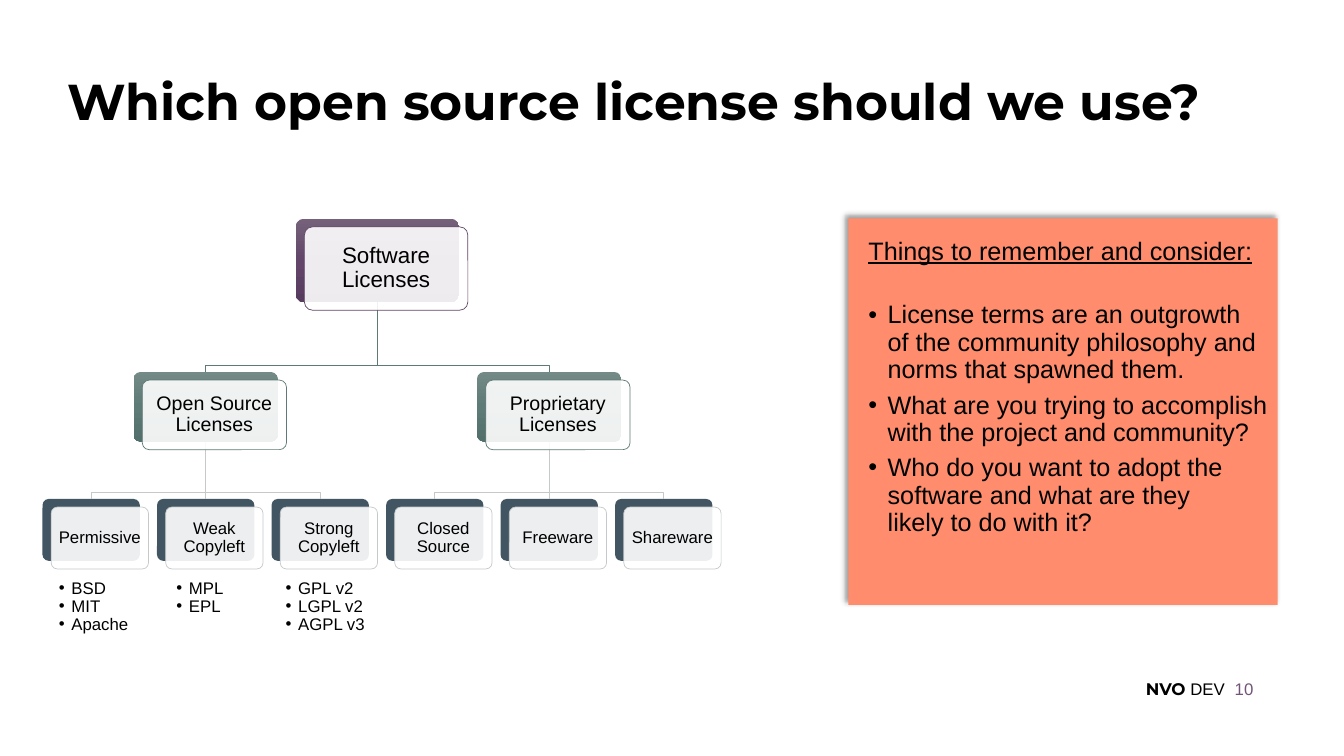
from copy import deepcopy

from pptx import Presentation
from pptx import util as u
from pptx.dml.color import RGBColor
from pptx.enum import shapes, text
from pptx.oxml import parse_xml
from pptx.oxml.ns import nsdecls, qn

Pt = u.Pt
BLACK = "000000"
LEAF_LEFT, LEAF_PITCH = 30.4, 81.8
PLATE_SHIFT_X, PLATE_SHIFT_Y = 6.2, 5.8
BAR_GAP = 5

# top, width, height, text size, card colours, plate line, branch line
ROOT = (156.2, 116.8, 59.6, 16, ("75627A", "624569", "583C5E"), "614767", None)
BRANCH = (265.7, 103, 49.7, 14, ("738A86", "5E7B77", "526F6B"), "5F7A76", "5F7A76")
LEAF = (356.4, 69.5, 44.2, 12, ("425563",), "C6C9CA", "C6C9CA")

TREE = {
    "Open Source Licenses": ["Permissive", "Weak Copyleft", "Strong Copyleft"],
    "Proprietary Licenses": ["Closed Source", "Freeware", "Shareware"],
}
EXAMPLES = [
    (42, ["BSD", "MIT", "Apache"]),
    (126, ["MPL", "EPL"]),
    (204, ["GPL v2", "LGPL v2", "AGPL v3"]),
]
REMINDERS = [
    "License terms are an outgrowth\nof the community philosophy and\nnorms that spawned them.",
    "What are you trying to accomplish\nwith the project and community?",
    "Who do you want to adopt the\nsoftware and what are they\nlikely to do with it?",
]


def rgb(value):
    return RGBColor.from_string(value)


def format_run(run, size, colour=BLACK, font="Arial", bold=False):
    run.font.size, run.font.name, run.font.bold = Pt(size), font, bold
    run.font.color.rgb = rgb(colour)


def format_frame(frame, insets, anchor=text.MSO_ANCHOR.TOP):
    """Insets are left, top, right, bottom in points."""
    frame.word_wrap = True
    frame.vertical_anchor = anchor
    (frame.margin_left, frame.margin_top,
     frame.margin_right, frame.margin_bottom) = map(Pt, insets)


def format_paragraph(paragraph, size, **style):
    paragraph.line_spacing = 0.9
    for run in paragraph.runs:
        format_run(run, size, **style)


def add_bullet(paragraph, indent):
    properties = paragraph._p.get_or_add_pPr()
    properties.set("marL", str(Pt(indent)))
    properties.set("indent", str(-Pt(indent)))
    properties.append(parse_xml(f'<a:buFont {nsdecls("a")} typeface="Arial"/>'))
    properties.append(parse_xml(f'<a:buChar {nsdecls("a")} char="•"/>'))


def add_text(slide, left, top, width, height, insets=(0, 0, 0, 0),
             anchor=text.MSO_ANCHOR.MIDDLE):
    box = slide.shapes.add_textbox(Pt(left), Pt(top), Pt(width), Pt(height))
    format_frame(box.text_frame, insets, anchor)
    return box.text_frame


def add_rounded(slide, left, top, width, height):
    shape = slide.shapes.add_shape(shapes.MSO_SHAPE.ROUNDED_RECTANGLE,
                                   Pt(left), Pt(top), Pt(width), Pt(height))
    shape.adjustments[0] = 0.1
    shape.shadow.inherit = False
    return shape


def add_card(slide, center, level):
    """Draw the coloured card behind a node."""
    top, width, height, _, colours, _, _ = level
    card = add_rounded(slide, center - width / 2, top, width, height)
    card.line.fill.background()
    if len(colours) == 1:
        card.fill.solid()
        card.fill.fore_color.rgb = rgb(colours[0])
        return card
    card.fill.gradient()
    card.fill.gradient_angle = 270
    stop_list = card._element.spPr.find(qn("a:gradFill")).find(qn("a:gsLst"))
    stop_list.insert(1, deepcopy(stop_list[0]))
    for stop, position, colour in zip(card.fill.gradient_stops, (0, 0.5, 1), colours):
        stop.position = position
        stop.color.rgb = rgb(colour)
    return card


def add_plate(slide, center, level, label):
    """Draw the pale, see-through plate that carries a node's label."""
    top, width, height, size, _, line, _ = level
    plate = add_rounded(slide, center - width / 2 + PLATE_SHIFT_X,
                        top + PLATE_SHIFT_Y, width, height)
    plate.fill.solid()
    plate.fill.fore_color.rgb = rgb("FFFFFF")
    colour = plate._element.spPr.find(qn("a:solidFill"))[0]
    colour.append(parse_xml(f'<a:alpha {nsdecls("a")} val="90000"/>'))
    plate.line.color.rgb = rgb(line)
    plate.line.width = Pt(0.5)
    format_frame(plate.text_frame, (3, 3, 3, 3), text.MSO_ANCHOR.MIDDLE)
    plate.text_frame.text = label
    paragraph = plate.text_frame.paragraphs[0]
    paragraph.alignment = text.PP_ALIGN.CENTER
    format_paragraph(paragraph, size)


def add_branch_line(slide, parent, child, colour):
    start_x, start_y = parent.left + parent.width // 2, parent.top + parent.height
    end_x, end_y = child.left + child.width // 2, child.top
    if abs(start_x - end_x) < Pt(1):
        line = slide.shapes.add_connector(shapes.MSO_CONNECTOR.STRAIGHT,
                                          start_x, start_y, end_x, end_y)
        line.begin_connect(parent, 2)
        line.end_connect(child, 0)
    else:
        bar_y = end_y - Pt(BAR_GAP)
        builder = slide.shapes.build_freeform(start_x, start_y)
        builder.add_line_segments([(start_x, bar_y), (end_x, bar_y), (end_x, end_y)],
                                  close=False)
        line = builder.convert_to_shape()
        line.fill.background()
    line.line.color.rgb = rgb(colour)
    line.line.width = Pt(0.5)
    if line._element.spPr.find(qn("a:effectLst")) is None:
        line._element.spPr.append(parse_xml(f'<a:effectLst {nsdecls("a")}/>'))


def add_license_tree(slide):
    leaf_center = LEAF_LEFT + LEAF[1] / 2
    nodes, links, branch_centers = [], [], []
    for branch, leaves in TREE.items():
        centers = []
        for leaf in leaves:
            centers.append(leaf_center)
            nodes.append((leaf, leaf_center, LEAF))
            links.append((branch, leaf, LEAF))
            leaf_center += LEAF_PITCH
        branch_centers.append(sum(centers) / len(centers))
        nodes.append((branch, branch_centers[-1], BRANCH))
        links.append(("Software Licenses", branch, BRANCH))
    root_center = sum(branch_centers) / len(branch_centers)
    nodes.append(("Software Licenses", root_center, ROOT))

    cards = {label: add_card(slide, center, level) for label, center, level in nodes}
    for parent, child, level in links:
        add_branch_line(slide, cards[parent], cards[child], level[-1])
    for label, center, level in nodes:
        add_plate(slide, center, level, label)


def add_examples(slide, left, names):
    frame = add_text(slide, left, 414, 72, 54, anchor=text.MSO_ANCHOR.TOP)
    frame.text = "\n".join(names)
    for paragraph in frame.paragraphs:
        add_bullet(paragraph, 9)
        format_paragraph(paragraph, 12)


def add_reminder_panel(slide):
    panel = slide.shapes.add_shape(shapes.MSO_SHAPE.RECTANGLE,
                                   Pt(606), Pt(156), Pt(306.7), Pt(276))
    panel.fill.solid()
    panel.fill.fore_color.rgb = rgb("FF8D6D")
    panel.line.fill.background()
    panel.shadow.inherit = False
    panel._element.spPr.find(qn("a:effectLst")).append(parse_xml(
        f'<a:outerShdw {nsdecls("a")} blurRad="{Pt(4)}" dist="{Pt(3)}" dir="13500000" '
        'algn="br" rotWithShape="0"><a:srgbClr val="000000"><a:alpha val="40000"/>'
        '</a:srgbClr></a:outerShdw>'))
    frame = panel.text_frame
    format_frame(frame, (14.4, 14.4, 3, 14.4))
    heading = frame.paragraphs[0]
    heading.text = "Things to remember and consider:"
    heading.alignment = text.PP_ALIGN.LEFT
    heading.space_after = Pt(20)
    format_paragraph(heading, 18)
    heading.runs[0].font.underline = True
    for reminder in REMINDERS:
        paragraph = frame.add_paragraph()
        paragraph.text = reminder
        paragraph.alignment = text.PP_ALIGN.LEFT
        paragraph.space_before = Pt(6)
        format_paragraph(paragraph, 18)
        add_bullet(paragraph, 13.7)


def add_title(slide):
    frame = add_text(slide, 48, 41, 864, 67)
    frame.text = "Which open source license should we use?"
    format_paragraph(frame.paragraphs[0], 36, font="Montserrat", bold=True)


def add_footer(slide):
    paragraph = add_text(slide, 565, 480, 317, 24, (7.2, 3.6, 7.2, 3.6)).paragraphs[0]
    paragraph.alignment = text.PP_ALIGN.RIGHT
    for words, font, bold in (("NVO ", "Montserrat", True), ("DEV", "Arial", False)):
        run = paragraph.add_run()
        run.text = words
        format_run(run, 12, font=font, bold=bold)
    number = add_text(slide, 882, 480, 31, 24)
    number.text = "10"
    format_run(number.paragraphs[0].runs[0], 12, "725478")


def main():
    presentation = Presentation()
    presentation.slide_width, presentation.slide_height = Pt(960), Pt(540)
    slide = presentation.slides.add_slide(presentation.slide_layouts[6])
    add_title(slide)
    add_license_tree(slide)
    for left, names in EXAMPLES:
        add_examples(slide, left, names)
    add_reminder_panel(slide)
    add_footer(slide)
    presentation.save("out.pptx")


if __name__ == "__main__":
    main()
